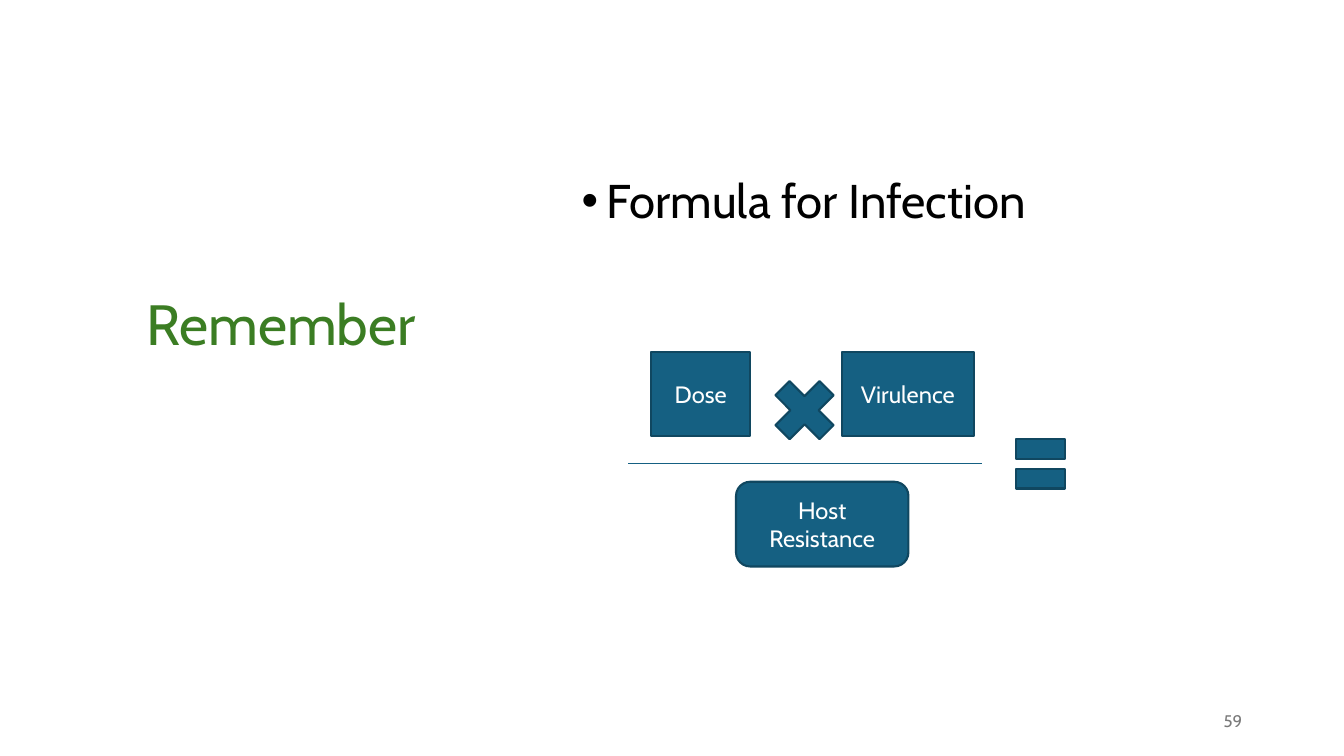
import dataclasses

import pptx
import pptx.dml.color
import pptx.enum.shapes
import pptx.enum.text
import pptx.oxml.ns
import pptx.util
from lxml import etree

EMU_PER_PX = 9144  # 100 px to the inch
SHAPES = pptx.enum.shapes.MSO_SHAPE
ALIGN = pptx.enum.text.PP_ALIGN
ANCHOR = pptx.enum.text.MSO_ANCHOR


@dataclasses.dataclass(frozen=True)
class Theme:
    font: str = "Cabin"
    title_color: str = "3B7D23"
    body_color: str = "000000"
    fill_color: str = "156082"
    outline_color: str = "104760"
    label_color: str = "FFFFFF"
    number_color: str = "797979"
    title_size: float = 40.5
    body_size: float = 33.8
    label_size: float = 16.9
    number_size: float = 12
    outline_width: float = 1.5
    rule_width: float = 1


def px(*lengths):
    return [pptx.util.Emu(length * EMU_PER_PX) for length in lengths]


def rgb(color):
    return pptx.dml.color.RGBColor.from_string(color)


class SlideBuilder:
    def __init__(self, slide, theme):
        self.slide = slide
        self.theme = theme

    def set_text(self, shape, text, size, color, align, anchor):
        frame = shape.text_frame
        frame.text = text
        frame.word_wrap = True
        frame.auto_size = pptx.enum.text.MSO_AUTO_SIZE.NONE
        frame.vertical_anchor = anchor
        paragraph = frame.paragraphs[0]
        paragraph.alignment = align
        font = paragraph.runs[0].font
        font.name = self.theme.font
        font.size = pptx.util.Pt(size)
        font.color.rgb = rgb(color)
        return paragraph

    def title(self, text, left, top, width, height):
        shape = self.slide.shapes.title
        shape.left, shape.top, shape.width, shape.height = px(left, top, width, height)
        paragraph = self.set_text(shape, text, self.theme.title_size,
                                  self.theme.title_color, ALIGN.LEFT, ANCHOR.BOTTOM)
        paragraph.line_spacing = 0.9

    def text(self, text, left, top, width, height, size, color,
             align=ALIGN.LEFT, anchor=ANCHOR.TOP):
        shape = self.slide.shapes.add_textbox(*px(left, top, width, height))
        return shape, self.set_text(shape, text, size, color, align, anchor)

    def bullet(self, text, left, top, width, height, inset_top):
        shape, paragraph = self.text(text, left, top, width, height,
                                     self.theme.body_size, self.theme.body_color)
        shape.text_frame.margin_top = px(inset_top)[0]
        paragraph.line_spacing = 0.9
        indent = px(25)[0]
        properties = paragraph._p.get_or_add_pPr()
        properties.set("marL", str(indent))
        properties.set("indent", str(-indent))
        font = etree.SubElement(properties, pptx.oxml.ns.qn("a:buFont"))
        font.set("typeface", "Arial")
        mark = etree.SubElement(properties, pptx.oxml.ns.qn("a:buChar"))
        mark.set("char", "•")

    def block(self, kind, left, top, width, height, label=None):
        shape = self.slide.shapes.add_shape(kind, *px(left, top, width, height))
        shape.shadow.inherit = False
        shape.fill.solid()
        shape.fill.fore_color.rgb = rgb(self.theme.fill_color)
        shape.line.color.rgb = rgb(self.theme.outline_color)
        shape.line.width = pptx.util.Pt(self.theme.outline_width)
        if label:
            self.set_text(shape, label, self.theme.label_size,
                          self.theme.label_color, ALIGN.CENTER, ANCHOR.MIDDLE)

    def rule(self, left, right, y):
        line = self.slide.shapes.add_connector(
            pptx.enum.shapes.MSO_CONNECTOR.STRAIGHT, *px(left, y, right, y))
        line.line.color.rgb = rgb(self.theme.fill_color)
        line.line.width = pptx.util.Pt(self.theme.rule_width)
        etree.SubElement(line._element.spPr, pptx.oxml.ns.qn("a:effectLst"))


def main():
    presentation = pptx.Presentation()
    presentation.slide_width, presentation.slide_height = px(1333, 750)
    slide = presentation.slides.add_slide(presentation.slide_layouts[5])
    theme = Theme()
    builder = SlideBuilder(slide, theme)

    # Title and heading
    builder.title("Remember", 135, 149, 340, 211)
    builder.bullet("Formula for Infection", 567, 108, 675, 533, inset_top=68)

    # Numerator: dose times virulence
    block_height = 84
    numerator_top = 349
    builder.block(SHAPES.RECTANGLE, 646, numerator_top, 98, block_height, "Dose")
    builder.block(SHAPES.MATH_MULTIPLY, 756, 365, 84, block_height)
    builder.block(SHAPES.RECTANGLE, 835, numerator_top, 131, block_height, "Virulence")

    # Fraction bar and denominator
    builder.rule(623, 974, 460)
    builder.block(SHAPES.ROUNDED_RECTANGLE, 730, 478, 171, block_height, "Host Resistance")

    # Equals sign
    builder.block(SHAPES.MATH_EQUAL, 999, 418, 66, block_height)

    # Slide number
    builder.text("59", 942, 695, 300, 40, theme.number_size, theme.number_color,
                 ALIGN.RIGHT, ANCHOR.MIDDLE)

    presentation.save("out.pptx")


if __name__ == "__main__":
    main()
